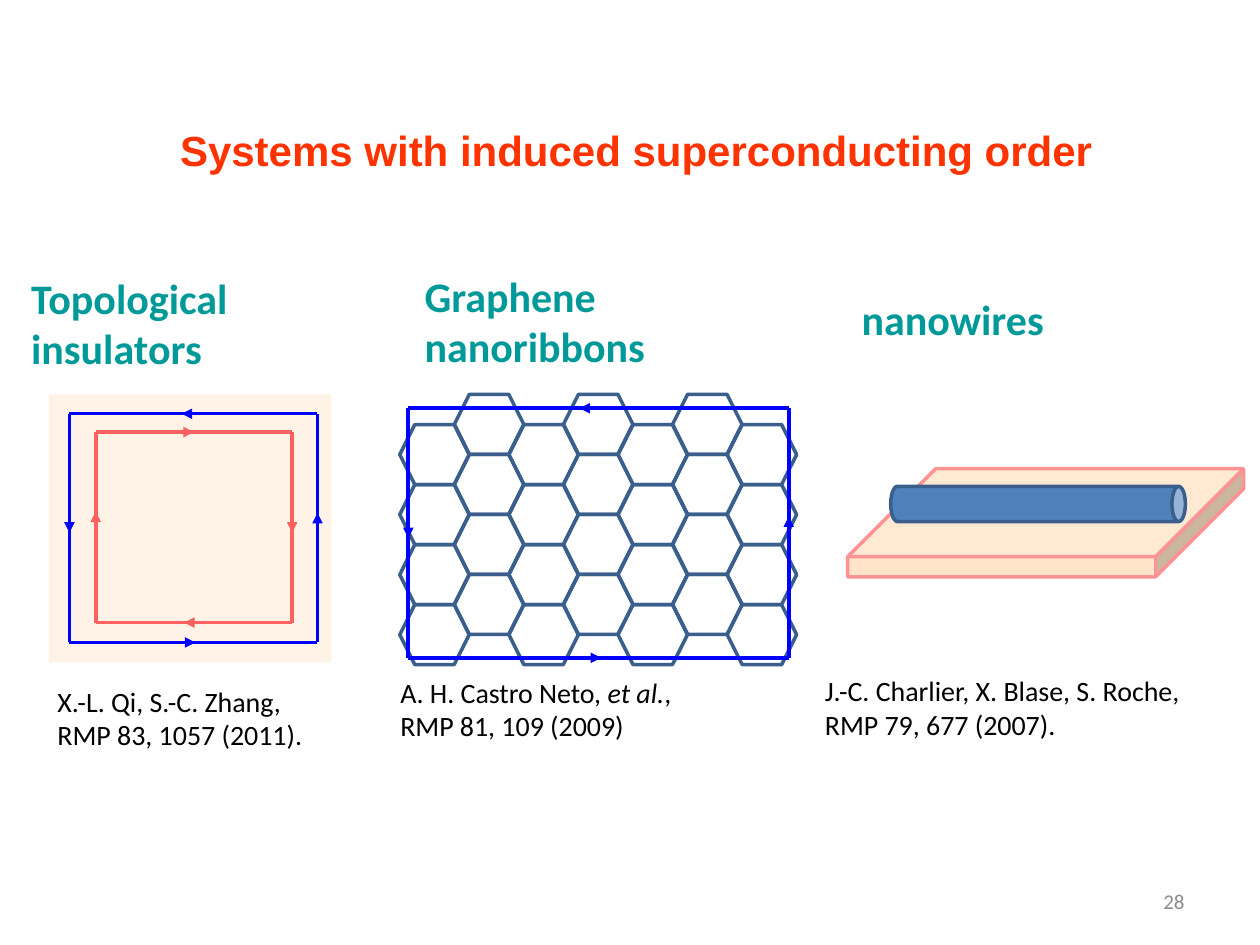
from lxml import etree
from pptx import Presentation
from pptx.dml.color import RGBColor
from pptx.enum.shapes import MSO_CONNECTOR, MSO_SHAPE
from pptx.enum.text import MSO_ANCHOR, PP_ALIGN
from pptx.oxml.ns import qn
from pptx.util import Cm, Pt

LINE = MSO_CONNECTOR.STRAIGHT
RECT, HEX = MSO_SHAPE.RECTANGLE, MSO_SHAPE.HEXAGON
CUBE, CAN = MSO_SHAPE.CUBE, MSO_SHAPE.CAN
TOP, MID = MSO_ANCHOR.TOP, MSO_ANCHOR.MIDDLE
LEFT, RIGHT = PP_ALIGN.LEFT, PP_ALIGN.RIGHT

HUES = {
    "title": "FF3300", "head": "009999", "text": "000000", "page": "8C8C8C",
    "sheet": "FFF3E7", "blue": "0000FF", "red": "FF6161", "cell": "3A5F8C",
    "slab": "FFE4C9", "edge": "FF9393", "wire": "4F81BD",
}
HUES = {name: RGBColor.from_string(code) for name, code in HUES.items()}

FORMS = {
    "title": {"name": "Arial", "size": Pt(24), "bold": True},
    "head": {"name": "Calibri", "size": Pt(24), "bold": True},
    "text": {"name": "Calibri", "size": Pt(16)},
    "page": {"name": "Calibri", "size": Pt(12)},
}

deck = Presentation()
deck.slide_width, deck.slide_height = Cm(25.4), Cm(19.05)
slide = deck.slides.add_slide(deck.slide_layouts[6])
shapes = slide.shapes


def add_line(start, end, hue, arrow=False):
    line = shapes.add_connector(LINE, *map(Cm, start + end))
    line.line.color.rgb = HUES[hue]
    line.line.width = Pt(2)
    if arrow:
        tail = etree.SubElement(line.line._get_or_add_ln(), qn("a:tailEnd"))
        tail.set("type", "triangle")
    etree.SubElement(line._element.spPr, qn("a:effectLst"))


def add_form(kind, box, fill=None, edge=None, adj=None):
    form = shapes.add_shape(kind, *map(Cm, box))
    form.shadow.inherit = False
    if fill:
        form.fill.solid()
        form.fill.fore_color.rgb = HUES[fill]
    else:
        form.fill.background()
    if edge:
        form.line.color.rgb = HUES[edge]
        form.line.width = Pt(2)
    else:
        form.line.fill.background()
    if adj:
        form.adjustments[0] = adj
    return form


# Insulator sheet
add_form(RECT, (0.99, 7.95, 5.69, 5.41), "sheet")

# Honeycomb: every second column sits half a cell higher
cells = [(8.06 + 1.1 * col, (7.95 if col % 2 else 8.56) + 1.21 * row)
         for col in range(7) for row in range(4)]
for x, y in cells:
    add_form(HEX, (x, y, 1.4, 1.21), edge="cell")

# Edge currents: frame, then arrow spans on top, bottom, left and right
loops = [
    ("blue", (1.4, 8.34, 6.4, 12.95),
     (4.37, 3.66), (3.23, 3.94), (9.45, 10.74), (11.66, 10.34)),
    ("red", (1.93, 8.71, 5.89, 12.55),
     (3.35, 3.91), (4.27, 3.71), (11.4, 10.31), (9.65, 10.74)),
    ("blue", (8.23, 8.23, 15.9, 13.26),
     (12.78, 11.68), (11.02, 12.12), (9.42, 10.85), (11.84, 10.41)),
]
for hue, (x1, y1, x2, y2), *spans in loops:
    top, low, left, right = spans
    for y, (start, end) in ((y1, top), (y2, low)):
        add_line((x1, y), (x2, y), hue)
        add_line((start, y), (end, y), hue, True)
    for x, (start, end) in ((x1, left), (x2, right)):
        add_line((x, y1), (x, y2), hue)
        add_line((x, start), (x, end), hue, True)

# Nanowire on its slab
add_form(CUBE, (17.09, 9.45, 7.98, 2.18), "slab", "edge", 0.814)
wire = add_form(CAN, (20.57, 7.19, 0.71, 5.94), "wire", "cell", 0.383)
wire.rotation = 90

# Texts: box, form, anchor, alignment, lines of runs (* marks italics)
texts = [
    ((3.38, 2.39, 19.48, 1.27), "title", TOP, LEFT,
     [["Systems with induced superconducting order"]]),
    ((0.38, 5.41, 7.14, 2.18), "head", MID, LEFT,
     [["Topological insulators"]]),
    ((8.31, 5.38, 7.7, 2.18), "head", MID, LEFT, [["Graphene nanoribbons"]]),
    ((17.12, 5.66, 7.7, 1.52), "head", MID, LEFT, [["nanowires"]]),
    ((0.91, 13.67, 5.84, 1.63), "text", TOP, LEFT,
     [["X.-L. Qi, S.-C. Zhang,"], ["RMP 83, 1057 (2011)."]]),
    ((7.82, 13.49, 8.08, 1.63), "text", TOP, LEFT,
     [["A. H. Castro Neto, ", "*et al.", ","], ["RMP 81, 109 (2009)"]]),
    ((16.38, 13.46, 9.09, 1.63), "text", TOP, LEFT,
     [["J.-C. Charlier, X. Blase, S. Roche,"], ["RMP 79, 677 (2007)."]]),
    ((18.21, 17.65, 5.92, 1.02), "page", MID, RIGHT, [["28"]]),
]
for box, form, anchor, align, lines in texts:
    frame = shapes.add_textbox(*map(Cm, box)).text_frame
    frame.word_wrap = True
    frame.vertical_anchor = anchor
    para = frame.paragraphs[0]
    para.alignment = align
    if form == "text":
        para.space_after = Pt(8)
    for num, line in enumerate(lines):
        if num:
            para.add_line_break()
        for words in line:
            run = para.add_run()
            run.text = words.lstrip("*")
            for key, value in FORMS[form].items():
                setattr(run.font, key, value)
            run.font.italic = words.startswith("*")
            run.font.color.rgb = HUES[form]

deck.save("out.pptx")
